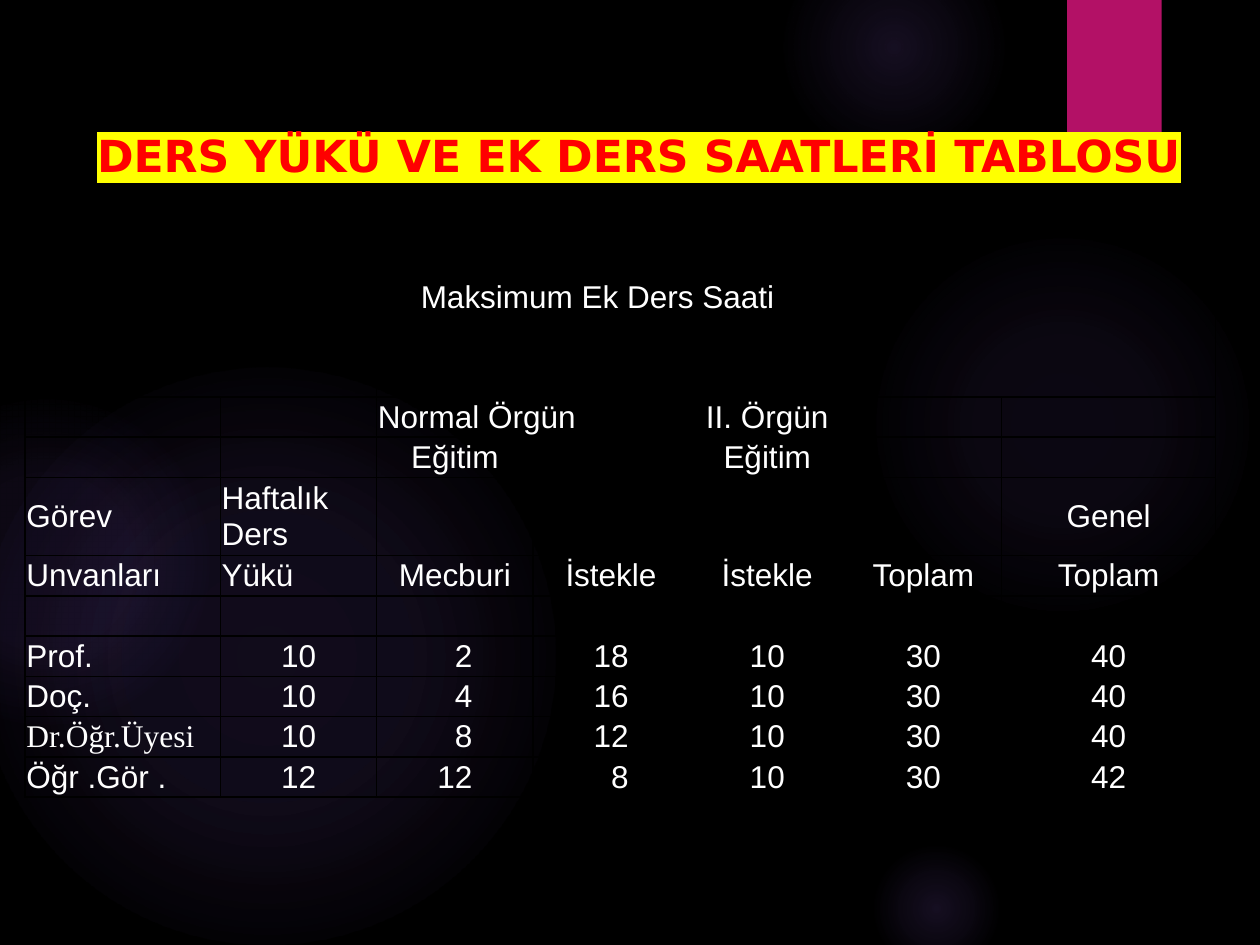
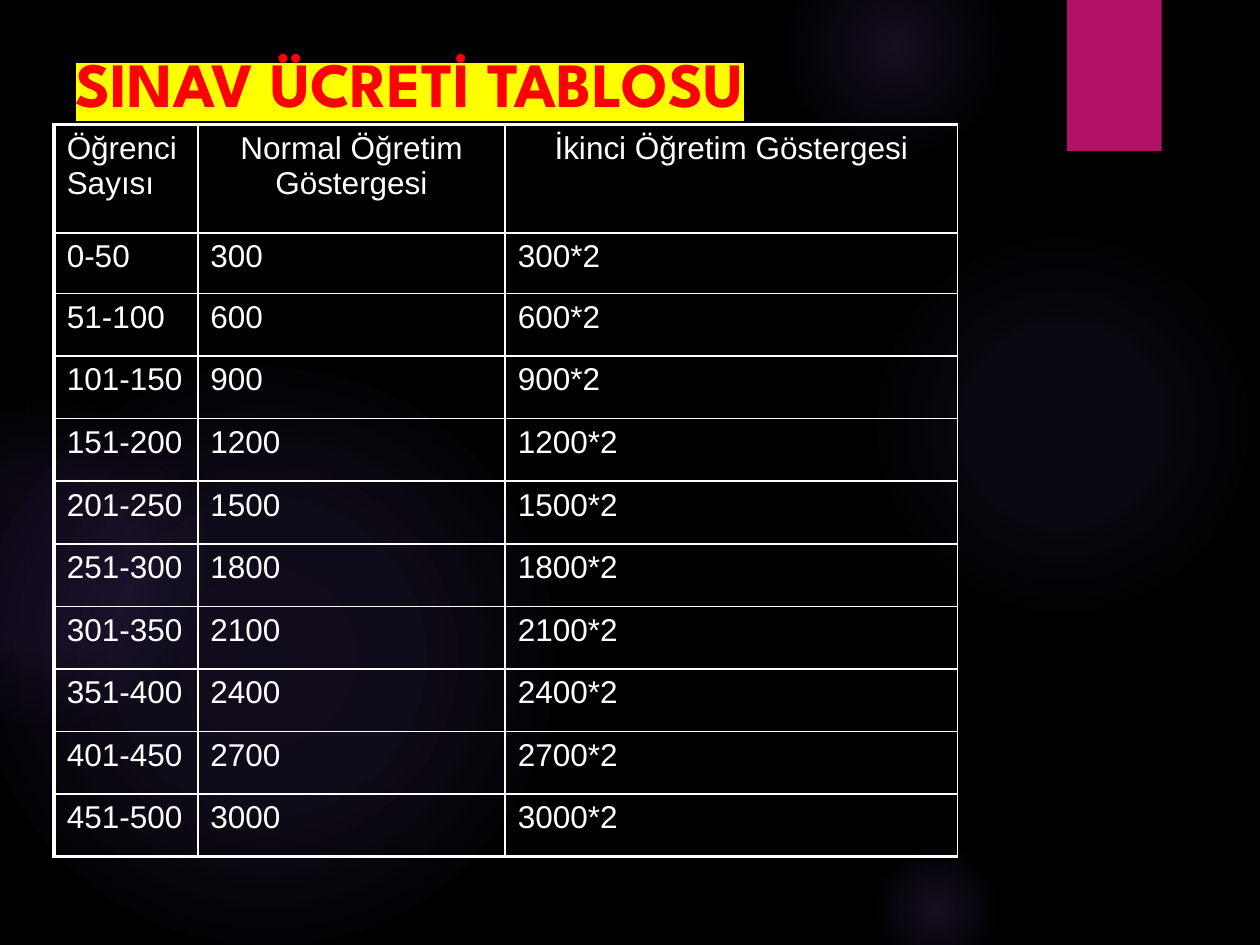
"""Build two slides with teaching load and exam fee tables."""
from dataclasses import dataclass

from lxml import etree
from pptx import Presentation
from pptx import util as u
from pptx.dml.color import RGBColor
from pptx.enum import shapes, text
from pptx.oxml import parse_xml
from pptx.oxml.ns import nsdecls, qn


@dataclass(frozen=True)
class Theme:
    """Colours, fonts and sizes shared by the slides."""
    background: str = "000000"
    glow: str = "9B6BF2"
    ribbon: str = "B31166"
    title: str = "FF0000"
    highlight: str = "FFFF00"
    body: str = "FFFFFF"
    load_title_font: str = "DejaVu Sans"
    fee_title_font: str = "League Spartan"
    body_font: str = "Arial"
    serif_font: str = "Times New Roman"
    load_title_size: float = 25.2
    fee_title_size: float = 36
    body_size: float = 18
    empty_size: float = 12
    thin: float = 1
    thick: float = 2.25


THEME = Theme()
GLOWS = [
    (6.89, 1.83, 3.08, [(0, 7), (36, 6), (69, 0)]),
    (6.22, -0.5, 1.75, [(0, 14), (36, 7), (73, 0)]),
    (6.89, 6.67, 1.08, [(0, 14), (36, 7), (66, 0)]),
    (-0.17, 2.92, 4.58, [(0, 11), (36, 10), (75, 0)]),
    (-0.92, 3.17, 2.58, [(0, 8), (36, 8), (72, 0)]),
]
LOAD_ROWS = [
    ["", "", "Maksimum Ek Ders Saati", "", "", "", ""],
    ["", "", "Normal Örgün", "", "II. Örgün", "", ""],
    ["", "", "Eğitim", "", "Eğitim", "", ""],
    ["Görev", "Haftalık Ders", "", "", "", "", "Genel"],
    ["Unvanları", "Yükü", "Mecburi", "İstekle", "İstekle", "Toplam", "Toplam"],
    [""] * 7,
    ["Prof.", "10", "2", "18", "10", "30", "40"],
    ["Doç.", "10", "4", "16", "10", "30", "40"],
    ["Dr.Öğr.Üyesi", "10", "8", "12", "10", "30", "40"],
    ["Öğr .Gör .", "12", "12", "8", "10", "30", "42"],
]
LOAD_LEFT = {(0, 2), (1, 2), (3, 1), (4, 1)}
LOAD_MERGES = [((0, 0), (0, 1)), ((0, 2), (0, 4)), ((0, 5), (0, 6)),
               ((1, 2), (1, 3))]
FEE_HEADER = ["Öğrenci Sayısı", "Normal Öğretim Göstergesi",
              "İkinci Öğretim Göstergesi"]


def add_span(para, content, font=THEME.body_font, size=THEME.body_size,
             color=THEME.body, bold=False, highlight=None):
    """Add a formatted run to a paragraph."""
    span = para.add_run()
    span.text = content
    span.font.name = font
    span.font.size = u.Pt(size)
    span.font.bold = bold
    span.font.color.rgb = RGBColor.from_string(color)
    if highlight:
        mark = parse_xml(f'<a:highlight {nsdecls("a")}>'
                         f'<a:srgbClr val="{highlight}"/></a:highlight>')
        span.font._element.find(qn("a:latin")).addprevious(mark)


def add_plain_shape(page, kind, left, top, width, height):
    """Add a preset shape without line or shadow."""
    shape = page.shapes.add_shape(
        kind, *(u.Inches(n) for n in (left, top, width, height)))
    shape.shadow.inherit = False
    shape.line.fill.background()
    return shape


def add_glow(page, left, top, size, stops):
    """Add a circle that fades out from its centre."""
    shape = add_plain_shape(page, shapes.MSO_SHAPE.OVAL, left, top, size, size)
    shape.fill.background()
    marks = "".join(
        f'<a:gs pos="{pos * 1000}"><a:srgbClr val="{THEME.glow}">'
        f'<a:alpha val="{alpha * 1000}"/></a:srgbClr></a:gs>'
        for pos, alpha in stops)
    gradient = parse_xml(
        f'<a:gradFill {nsdecls("a")} rotWithShape="1"><a:gsLst>{marks}</a:gsLst>'
        '<a:path path="circle"><a:fillToRect l="50000" t="50000" r="50000" '
        'b="50000"/></a:path></a:gradFill>')
    properties = shape.element.spPr
    properties.replace(properties.find(qn("a:noFill")), gradient)
    return shape


def add_ribbon(page):
    """Add the coloured band at the top edge."""
    shape = add_plain_shape(page, shapes.MSO_SHAPE.RECTANGLE, 8.47, 0, 0.75, 1.2)
    shape.fill.solid()
    shape.fill.fore_color.rgb = RGBColor.from_string(THEME.ribbon)
    return shape


def decorate_layout(layout, page):
    """Give the layout its background, glows and ribbon."""
    layout.background.fill.solid()
    layout.background.fill.fore_color.rgb = RGBColor.from_string(THEME.background)
    decor = [add_glow(page, *glow) for glow in GLOWS] + [add_ribbon(page)]
    for index, shape in enumerate(decor):
        shape.element.nvSpPr.cNvPr.set("id", str(100 + index))
        layout.shapes.element.insert(2 + index, shape.element)


def set_title(page, content, place, font, size, inset_top):
    """Place and format the title."""
    box = page.shapes.title
    box.left, box.top, box.width, box.height = (u.Inches(n) for n in place)
    frame = box.text_frame
    frame.word_wrap = True
    frame.auto_size = text.MSO_AUTO_SIZE.NONE
    frame.vertical_anchor = text.MSO_ANCHOR.TOP
    frame.margin_left = u.Inches(0.1)
    frame.margin_right = frame.margin_bottom = 0
    frame.margin_top = u.Inches(inset_top)
    para = frame.paragraphs[0]
    para.alignment = text.PP_ALIGN.LEFT
    add_span(para, content, font=font, size=size, color=THEME.title, bold=True,
             highlight=THEME.highlight)


def set_borders(cell, color, widths):
    """Draw the left, right, top and bottom borders of a cell."""
    properties = cell._tc.get_or_add_tcPr()
    for index, (side, width) in enumerate(zip("LRTB", widths)):
        properties.insert(index, parse_xml(
            f'<a:ln{side} {nsdecls("a")} w="{u.Pt(width)}"><a:solidFill>'
            f'<a:srgbClr val="{color}"/></a:solidFill></a:ln{side}>'))


def fill_cell(cell, content, centred, indent=0, font=THEME.body_font):
    """Write the text of a cell."""
    para = cell.text_frame.paragraphs[0]
    if not content:
        etree.SubElement(para._p, qn("a:endParaRPr"),
                         sz=str(u.Pt(THEME.empty_size).centipoints))
        return
    para.alignment = text.PP_ALIGN.CENTER if centred else text.PP_ALIGN.LEFT
    if indent:
        para._p.get_or_add_pPr().set("marL", str(u.Inches(indent)))
    add_span(para, content, font=font)


def add_grid(page, left, top, widths, heights, margins, anchor):
    """Add an unstyled table with the given column and row sizes."""
    frame = page.shapes.add_table(
        len(heights), len(widths), u.Inches(left), u.Inches(top),
        u.Inches(sum(widths)), u.Inches(sum(heights)))
    table = frame.table
    table.first_row = table.horz_banding = False
    for column, width in zip(table.columns, widths):
        column.width = u.Inches(width)
    for row, height in zip(table.rows, heights):
        row.height = u.Inches(height)
    for cell in table.iter_cells():
        cell.margin_left = cell.margin_right = u.Inches(margins[0])
        cell.margin_top = cell.margin_bottom = u.Inches(margins[1])
        cell.vertical_anchor = anchor
        cell.fill.background()
    return table


def add_load_table(page):
    """Add the table of teaching loads."""
    heights = [1.58, 0.32, 0.32, 0.62] + [0.32] * 6
    table = add_grid(page, 0.2, 1.57, [1.55] + [1.24] * 5 + [1.7], heights,
                     (0.01, 0.01), text.MSO_ANCHOR.MIDDLE)
    for r, row in enumerate(LOAD_ROWS):
        for c, content in enumerate(row):
            cell = table.cell(r, c)
            indent = 0.34 if r == 0 else 0.14 if c and len(content) == 1 else 0
            font = THEME.serif_font if content.startswith("Dr.") else THEME.body_font
            fill_cell(cell, content, c > 0 and (r, c) not in LOAD_LEFT, indent, font)
            set_borders(cell, THEME.background, [THEME.thin] * 4)
    for first, last in LOAD_MERGES:
        table.cell(*first).merge(table.cell(*last))


def add_fee_table(page):
    """Add the table of exam fees, one row for each fifty students."""
    rows = [FEE_HEADER]
    for step in range(10):
        start = step * 50 + 1 if step else 0
        fee = 300 * (step + 1)
        rows.append([f"{start}-{step * 50 + 50}", f"{fee}", f"{fee}*2"])
    top_heights = [0.86, 0.48]
    rest = len(rows) - len(top_heights)
    heights = top_heights + [(5.81 - sum(top_heights)) / rest] * rest
    table = add_grid(page, 0.43, 0.99, [1.14, 2.44, 3.59], heights,
                     (0.1, 0.05), text.MSO_ANCHOR.TOP)
    for r, row in enumerate(rows):
        for c, content in enumerate(row):
            cell = table.cell(r, c)
            fill_cell(cell, content, r == 0 and c > 0)
            outer = (c == 0, False, r == 0, r == len(rows) - 1)
            set_borders(cell, THEME.body,
                        [THEME.thick if edge else THEME.thin for edge in outer])


def main():
    """Build and save the deck."""
    deck = Presentation()
    deck.slide_width, deck.slide_height = u.Inches(10), u.Inches(7.5)
    layout = deck.slide_layouts[5]
    load_page, fee_page = (deck.slides.add_slide(layout) for _ in range(2))
    decorate_layout(layout, load_page)
    set_title(load_page, "DERS YÜKÜ VE EK DERS SAATLERİ TABLOSU",
              (0.67, 0.13, 8.83, 1.32), THEME.load_title_font,
              THEME.load_title_size, 0.89)
    add_load_table(load_page)
    set_title(fee_page, "SINAV ÜCRETİ TABLOSU", (0.5, 0.3, 9, 0.66),
              THEME.fee_title_font, THEME.fee_title_size, 0.05)
    add_fee_table(fee_page)
    deck.save("out.pptx")


if __name__ == "__main__":
    main()
